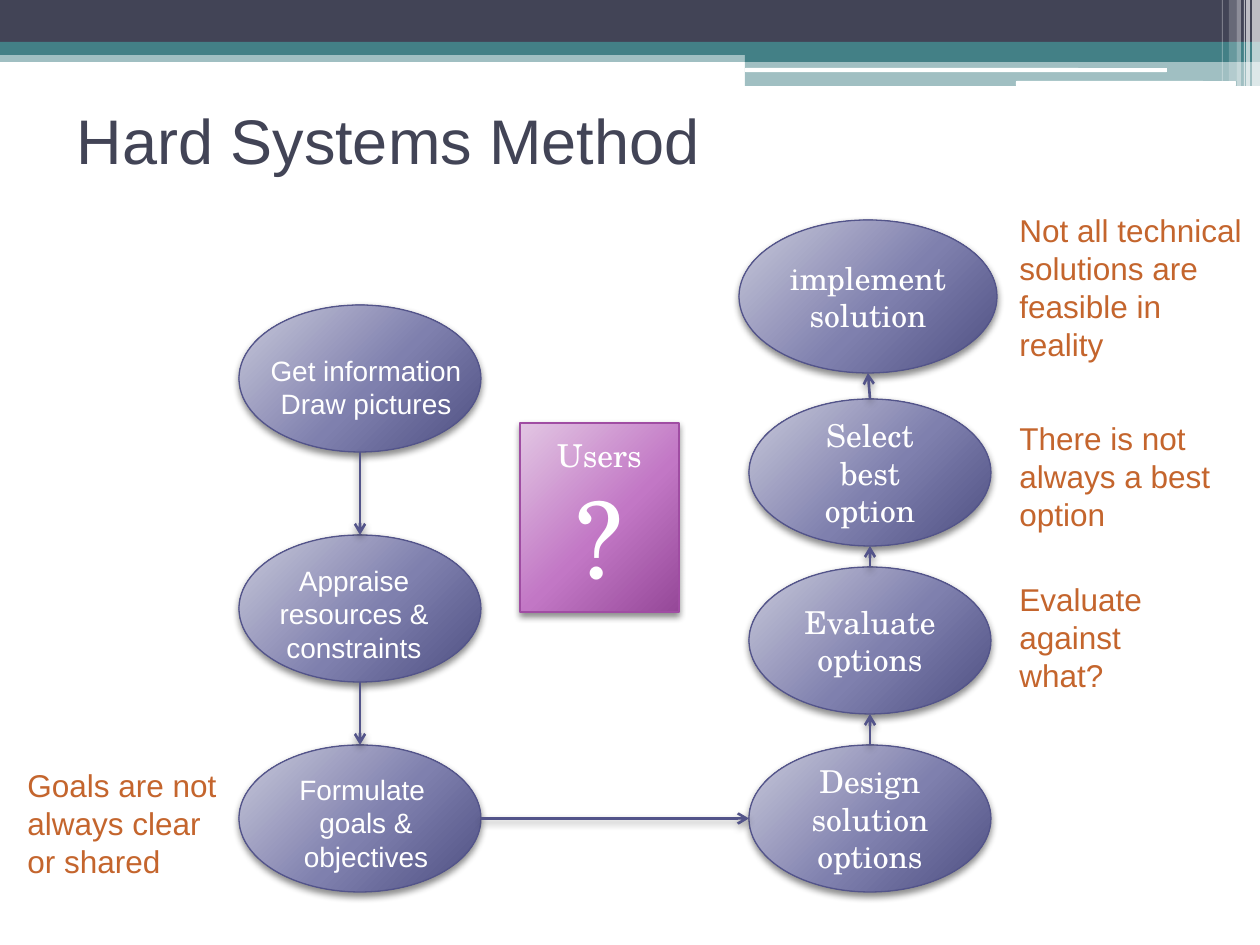
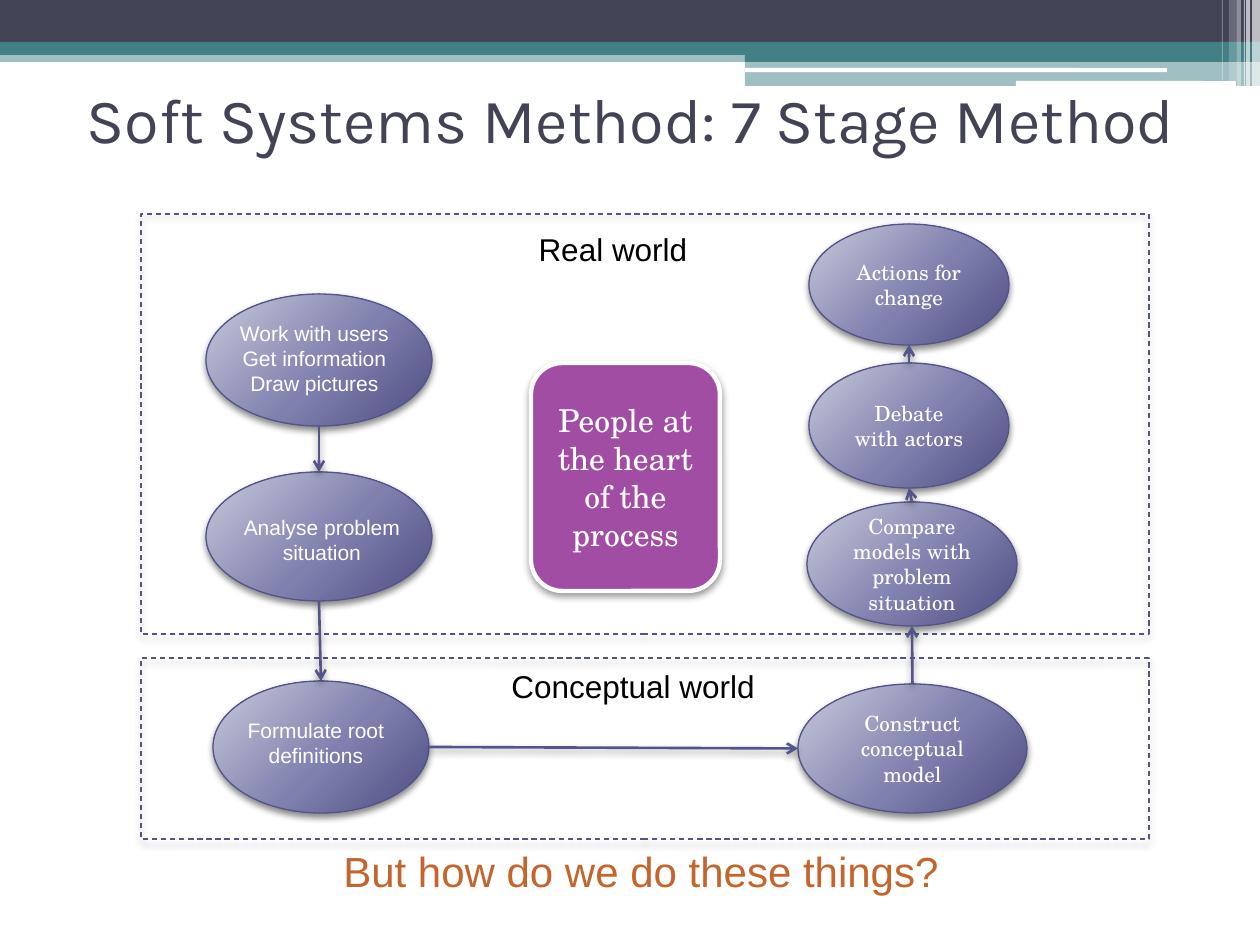
from pptx import Presentation
from pptx.dml.color import RGBColor
from pptx.enum.dml import MSO_LINE
from pptx.enum.shapes import MSO_CONNECTOR, MSO_SHAPE
from pptx.enum.text import MSO_ANCHOR, MSO_AUTO_SIZE, PP_ALIGN
from pptx.oxml import parse_xml
from pptx.oxml.ns import nsdecls, qn
from pptx.util import Emu, Pt

INK, TEAL, WHITE, BLACK = "424456", "438086", "FFFFFF", "000000"
BLUE, PLUM, RUST = "53548A", "A04DA3", "C4652D"
BLUES = ("C9C9DA", "7F80AE", "4D4E81")
PLUMS = ("E2C6E3", "C277C5", "954898")
SANS, SERIF, KARLA = "Arial", "TeX Gyre Schola", "Karla"
PAGE = (0, 0, 1260, 945)
NS = nsdecls("a")


def px(n):
    return Emu(round(n * 914400 / 126))


def rgb(code):
    return RGBColor.from_string(code)


def place(box, x, y, w, h):
    """Turn a spot inside a box into page lengths."""
    return [px(n) for n in (box[0] + x, box[1] + y, w, h)]


def write(frame, lines, size, color, font, align=PP_ALIGN.CENTER,
          anchor=MSO_ANCHOR.MIDDLE):
    """Write one paragraph per line; a line may be (text, size)."""
    frame.word_wrap = True
    frame.auto_size = MSO_AUTO_SIZE.NONE
    frame.vertical_anchor = anchor
    for i, line in enumerate(lines):
        text, points = line if isinstance(line, tuple) else (line, size)
        para = frame.paragraphs[0] if i == 0 else frame.add_paragraph()
        para.alignment = align
        run = para.add_run()
        run.text = text
        run.font.size = Pt(points)
        run.font.name = font
        run.font.color.rgb = rgb(color)


def label(slide, box, spot, lines, size, color, align=PP_ALIGN.CENTER):
    area = slide.shapes.add_textbox(*place(box, *spot))
    write(area.text_frame, lines, size, color, SANS, align, MSO_ANCHOR.TOP)


def shade(shape, alpha, blur):
    """Drop a soft shadow straight down."""
    props = shape.element.spPr
    for old in props.findall(qn("a:effectLst")):
        props.remove(old)
    props.append(parse_xml(
        f'<a:effectLst {NS}><a:outerShdw blurRad="{blur}" dist="25400" '
        f'dir="5400000" algn="ctr" rotWithShape="0"><a:srgbClr val="{BLACK}">'
        f'<a:alpha val="{alpha * 1000}"/></a:srgbClr></a:outerShdw></a:effectLst>'))


def glow(shape, colors):
    """Fill with a round gradient lit from the top left."""
    stops = "".join(
        f'<a:gs pos="{pos * 1000}"><a:srgbClr val="{color}"/></a:gs>'
        for pos, color in zip((0, 55, 100), colors))
    shape.element.spPr.find(qn("a:prstGeom")).addnext(parse_xml(
        f'<a:gradFill {NS} rotWithShape="1"><a:gsLst>{stops}</a:gsLst>'
        '<a:path path="circle"><a:fillToRect l="-40000" t="-90000" '
        'r="140000" b="190000"/></a:path></a:gradFill>'))


def draw(slide, kind, box, spot, fill=None, line=BLUE, width=0.75,
         alpha=45, blur=50800):
    """Add an outlined, shadowed shape; fill is a hex, three hexes or None."""
    shape = slide.shapes.add_shape(kind, *place(box, *spot))
    if fill is None:
        shape.fill.background()
    elif isinstance(fill, tuple):
        glow(shape, fill)
    else:
        shape.fill.solid()
        shape.fill.fore_color.rgb = rgb(fill)
    shape.line.color.rgb = rgb(line)
    shape.line.width = Pt(width)
    shade(shape, alpha, blur)
    return shape


def side(shape, name):
    mid_x, mid_y = shape.left + shape.width // 2, shape.top + shape.height // 2
    return {"top": (mid_x, shape.top), "left": (shape.left, mid_y),
            "bottom": (mid_x, shape.top + shape.height),
            "right": (shape.left + shape.width, mid_y)}[name]


def arrow(slide, start, leave, end, enter):
    line = slide.shapes.add_connector(
        MSO_CONNECTOR.STRAIGHT, *side(start, leave), *side(end, enter))
    line.line.color.rgb = rgb(BLUE)
    line.line.width = Pt(1.5)
    line.line.fill  # keeps the outline element in place
    line.element.spPr.find(qn("a:ln")).append(
        parse_xml(f'<a:tailEnd {NS} type="arrow"/>'))
    shade(line, 40, 52070)


def fall(slide, box, steps, size):
    """Ovals linked downwards, each with a caption laid over it."""
    ovals = []
    for spot, over, lines in steps:
        ovals.append(draw(slide, MSO_SHAPE.OVAL, box, spot, BLUES))
        label(slide, box, over, lines, size, WHITE)
    for upper, lower in zip(ovals, ovals[1:]):
        arrow(slide, upper, "bottom", lower, "top")
    return ovals


def climb(slide, box, steps, size):
    """Ovals linked upwards, listed from the lowest."""
    ovals = []
    for spot, text in steps:
        oval = draw(slide, MSO_SHAPE.OVAL, box, spot, BLUES)
        write(oval.text_frame, [text], size, WHITE, SERIF)
        ovals.append(oval)
    for lower, upper in zip(ovals, ovals[1:]):
        arrow(slide, lower, "top", upper, "bottom")
    return ovals


def band(slide, master, box):
    """Build the top band and hand it to the master."""
    bar, pill = MSO_SHAPE.RECTANGLE, MSO_SHAPE.ROUNDED_RECTANGLE
    parts = [
        (bar, 0, 50, 1260, 12, TEAL, 50), (bar, 0, 0, 1260, 42, INK, 100),
        (bar, 0, 42, 1260, 13, TEAL, 100), (bar, 745, 49, 515, 13, TEAL, 100),
        (bar, 745, 61, 515, 25, TEAL, 50), (pill, 745, 68, 422, 4, WHITE, 100),
        (pill, 1016, 81, 220, 5, WHITE, 100)]
    strips = [(1252, 8, 86, 65), (1246, 4, 86, 65), (1244, 1, 86, 60),
              (1237, 4, 86, 40), (1229, 8, 81, 20), (1222, 1, 81, 30)]
    parts += [(bar, x, 0, w, h, WHITE, a) for x, w, h, a in strips]
    for n, (kind, *spot, color, alpha) in enumerate(parts):
        shape = slide.shapes.add_shape(kind, *place(box, *spot))
        shape.shadow.inherit = False
        shape.line.fill.background()
        shape.fill.solid()
        shape.fill.fore_color.rgb = rgb(color)
        if alpha < 100:
            shape.element.spPr.find(".//" + qn("a:srgbClr")).append(
                parse_xml(f'<a:alpha {NS} val="{alpha * 1000}"/>'))
        shape.element.nvSpPr.cNvPr.set("id", str(100 + n))
        master.shapes.element.insert(2 + n, shape.element)


def head(slide, x, y, text, font):
    title = slide.shapes.title
    title.left, title.top, title.width, title.height = place(
        PAGE, x, y, 1134, 147)
    write(title.text_frame, [text], 36, INK, font, PP_ALIGN.LEFT)


def hard(slide, box):
    w, h = 242, 147
    falls = fall(slide, (box[0] + 239, box[1] + 305, w, 588), [
        ((0, 0, w, h), (12, 42, 230, 80), ["Get information", "Draw pictures"]),
        ((0, 230, w, h), (0, 252, 230, 115), ["Appraise resources & constraints"]),
        ((0, 440, w, h), (12, 461, 230, 115), ["Formulate ", "goals & objectives"]),
    ], 16)
    climbs = climb(slide, (box[0] + 739, box[1] + 220, 258, 673), [
        ((10, 525, w, h), "Design solution options"),
        ((10, 347, w, h), "Evaluate options"),
        ((10, 179, w, h), "Select best option"),
        ((0, 0, 258, 153), "implement solution"),
    ], 18)
    arrow(slide, falls[-1], "right", climbs[0], "left")
    users = draw(slide, MSO_SHAPE.RECTANGLE, box, (520, 423, 159, 189),
                 PLUMS, PLUM)
    write(users.text_frame, ["Users", ("?", 60)], 18, WHITE, SERIF)
    for spot, text in [
            ((15, 760, 218, 128), "Goals are not always clear or shared"),
            ((1007, 413, 218, 128), "There is not always a best option"),
            ((1007, 205, 253, 165),
             "Not all technical solutions are feasible in reality"),
            ((1007, 574, 218, 128), "Evaluate against what?")]:
        label(slide, box, spot, [text], 18, RUST, PP_ALIGN.LEFT)


def soft(slide, box):
    for y, h in ((658, 181), (214, 420)):
        frame = draw(slide, MSO_SHAPE.RECTANGLE, box, (141, y, 1008, h))
        frame.line.dash_style = MSO_LINE.DASH
    falls = fall(slide, (box[0] + 206, box[1] + 294, 226, 519), [
        ((0, 0, 226, 132), (7, 20, 203, 128),
         ["Work with users Get information", "Draw pictures"]),
        ((0, 178, 226, 129), (17, 214, 198, 63), ["Analyse problem situation"]),
        ((7, 387, 216, 132), (-3, 417, 226, 63), ["Formulate root", "definitions"]),
    ], 12)
    climbs = climb(slide, (box[0] + 798, box[1] + 224, 229, 589), [
        ((0, 460, 229, 129), "Construct conceptual model"),
        ((9, 278, 210, 124), "Compare models with problem situation"),
        ((11, 139, 200, 125), "Debate with actors"),
        ((11, 0, 200, 121), "Actions for change"),
    ], 12)
    tight = climbs[1].text_frame
    tight.margin_left = tight.margin_right = 0
    arrow(slide, falls[-1], "right", climbs[0], "left")
    label(slide, box, (494, 224, 238, 50), ["Real world"], 18, BLACK)
    label(slide, box, (471, 661, 324, 50), ["Conceptual world"], 18, BLACK)
    heart = draw(slide, MSO_SHAPE.ROUNDED_RECTANGLE, box, (531, 363, 189, 228),
                 PLUM, WHITE, 2.5, 40, 52070)
    write(heart.text_frame, ["People at the heart of the process"], 18,
          WHITE, SERIF)
    label(slide, box, (115, 839, 1052, 63),
          ["But how do we do these things?"], 24, RUST)


def main():
    prs = Presentation()
    prs.slide_width, prs.slide_height = px(PAGE[2]), px(PAGE[3])
    layout = prs.slide_layouts[5]
    first, second = (prs.slides.add_slide(layout) for _ in range(2))
    band(first, prs.slide_master, PAGE)
    head(first, 64, 66, "Hard Systems Method", SANS)
    hard(first, PAGE)
    head(second, 74, 45, "Soft Systems Method: 7 Stage Method", KARLA)
    soft(second, PAGE)
    prs.save("out.pptx")


if __name__ == "__main__":
    main()
